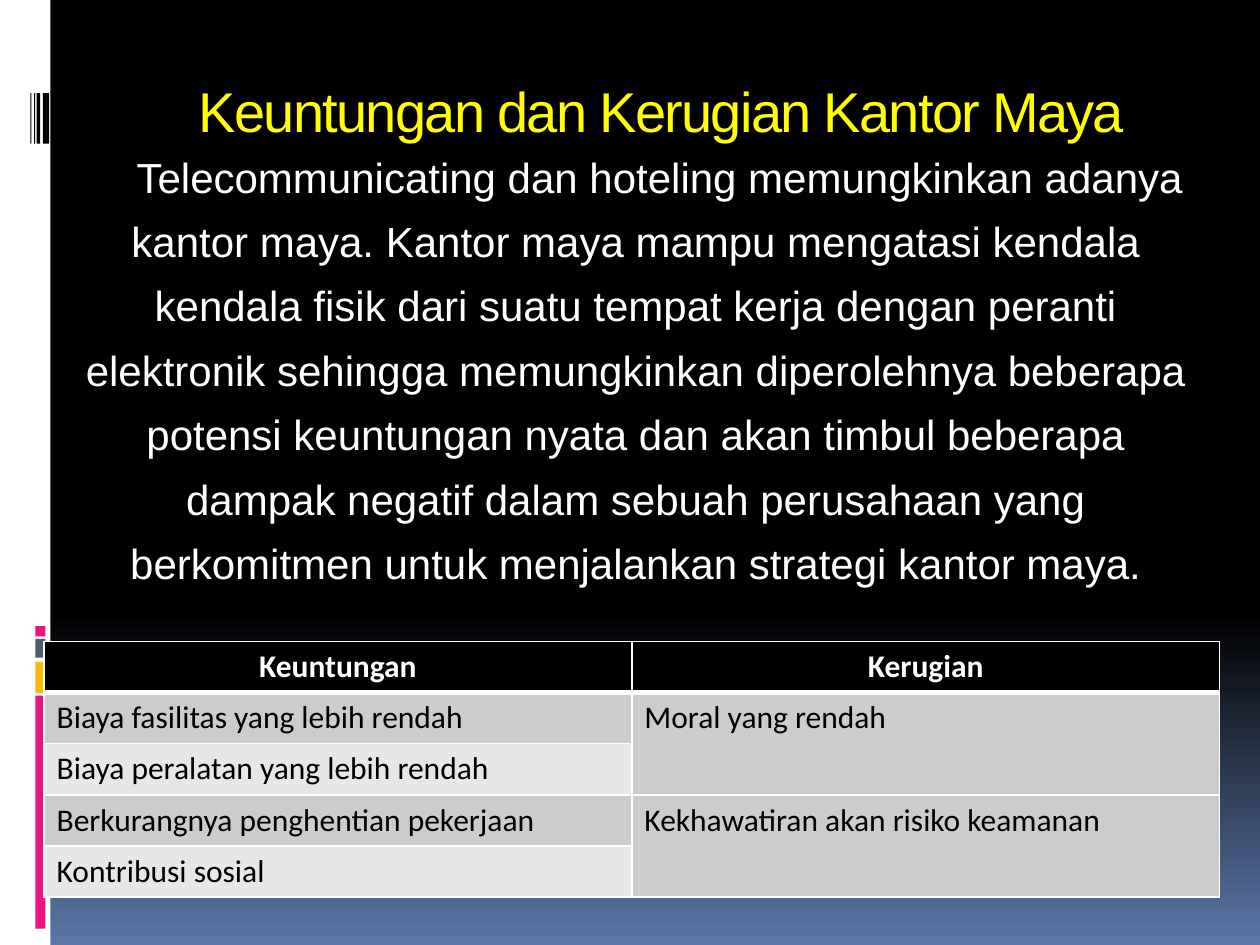
import pptx
import pptx.dml.color
import pptx.enum.shapes
import pptx.enum.text
import pptx.oxml
import pptx.oxml.ns
import pptx.util
from pptx.util import Inches

RGBColor = pptx.dml.color.RGBColor
ALIGN = pptx.enum.text.PP_ALIGN
BLACK = RGBColor(0x00, 0x00, 0x00)
WHITE = RGBColor(0xFF, 0xFF, 0xFF)
YELLOW = RGBColor(0xFF, 0xFF, 0x00)
BLUE = RGBColor(0x5B, 0x77, 0xA8)
PINK = RGBColor(0xEA, 0x15, 0x7A)
AMBER = RGBColor(0xFE, 0xB8, 0x0A)
SLATE = RGBColor(0x4E, 0x5B, 0x6F)
GREY = RGBColor(0xCC, 0xCC, 0xCC)
LIGHT_GREY = RGBColor(0xE7, 0xE7, 0xE7)

NS = pptx.oxml.ns.nsdecls("a")

# left, top, width, height, colour
SIDE_BARS = [
    (0, 0, 0.4, 7.5, WHITE),
    (0.28, 5.52, 0.08, 1.85, PINK),
    (0.28, 5.25, 0.08, 0.25, AMBER),
    (0.28, 5.07, 0.08, 0.15, SLATE),
    (0.28, 4.97, 0.08, 0.08, PINK),
] + [(left, 0.74, width, 0.4, BLACK)
     for left, width in ((0.34, 0.05), (0.29, 0.03), (0.27, 0.01), (0.24, 0.01))]

BODY_LINES = [
    "Telecommunicating dan hoteling memungkinkan adanya",
    "kantor maya. Kantor maya mampu mengatasi kendala",
    "kendala fisik dari suatu tempat kerja dengan peranti",
    "elektronik sehingga memungkinkan diperolehnya beberapa",
    "potensi keuntungan nyata dan akan timbul beberapa",
    "dampak negatif dalam sebuah perusahaan yang",
    "berkomitmen untuk menjalankan strategi kantor maya.",
]

TABLE_ROWS = [
    ("Keuntungan", "Kerugian"),
    ("Biaya fasilitas yang lebih rendah", "Moral yang rendah"),
    ("Biaya peralatan yang lebih rendah", ""),
    ("Berkurangnya penghentian pekerjaan", "Kekhawatiran akan risiko keamanan"),
    ("Kontribusi sosial", ""),
]


def add_text(paragraph, text, *, size, color, font="Arial", bold=False,
             align=ALIGN.LEFT, spacing=None):
    run = paragraph.add_run()
    run.text = text
    run.font.name = font
    run.font.size = pptx.util.Pt(size)
    run.font.bold = bold
    run.font.color.rgb = color
    paragraph.alignment = align
    if spacing is not None:
        run.font._element.set("spc", str(spacing * 100))


def set_background(slide):
    fill = slide.background.fill
    fill.gradient()
    fill.gradient_angle = 270  # counter-clockwise: runs from top to bottom
    stops = fill._fill._gradFill.find(pptx.oxml.ns.qn("a:gsLst"))
    for stop in list(stops):
        stops.remove(stop)
    for percent, color in ((0, BLACK), (65, BLACK), (100, BLUE)):
        stops.append(pptx.oxml.parse_xml(
            f'<a:gs {NS} pos="{percent * 1000}"><a:srgbClr val="{color}"/></a:gs>'))


def add_bar(slide, left, top, width, height, color):
    bar = slide.shapes.add_shape(
        pptx.enum.shapes.MSO_SHAPE.RECTANGLE,
        Inches(left), Inches(top), Inches(width), Inches(height))
    bar.shadow.inherit = False
    bar.fill.solid()
    bar.fill.fore_color.rgb = color
    bar.line.fill.background()


def place(holder, left, top, width, height):
    holder.left, holder.top = Inches(left), Inches(top)
    holder.width, holder.height = Inches(width), Inches(height)
    frame = holder.text_frame
    frame.word_wrap = True
    frame.auto_size = pptx.enum.text.MSO_AUTO_SIZE.NONE
    frame.vertical_anchor = pptx.enum.text.MSO_ANCHOR.TOP
    return frame


def fill_title(slide):
    frame = place(slide.shapes.title, 1, 0.56, 8.5, 1)
    add_text(frame.paragraphs[0], "Keuntungan dan Kerugian Kantor Maya",
             size=32, color=YELLOW, align=ALIGN.CENTER, spacing=-1)


def fill_body(slide):
    frame = place(slide.placeholders[1], 0.51, 1.15, 9, 5.54)
    for index, line in enumerate(BODY_LINES):
        paragraph = frame.add_paragraph() if index else frame.paragraphs[0]
        paragraph.space_before = pptx.util.Pt(8)
        properties = paragraph._p.get_or_add_pPr()
        properties.set("marL", str(Inches(0.45)))
        properties.set("indent", str(Inches(-0.38)))
        properties.append(pptx.oxml.parse_xml(f"<a:buNone {NS}/>"))
        if index == 0:
            add_text(paragraph, "\t", size=20, color=WHITE)
        add_text(paragraph, line, size=24, color=WHITE, align=ALIGN.CENTER)


def set_borders(cell, bottom, top):
    properties = cell._tc.get_or_add_tcPr()
    sides = (("lnL", 1), ("lnR", 1), ("lnT", top), ("lnB", bottom))
    for position, (side, points) in enumerate(sides):
        properties.insert(position, pptx.oxml.parse_xml(
            f'<a:{side} {NS} w="{pptx.util.Pt(points)}"><a:solidFill>'
            f'<a:srgbClr val="{WHITE}"/></a:solidFill></a:{side}>'))


def add_comparison(slide):
    row_count = len(TABLE_ROWS)
    table = slide.shapes.add_table(
        row_count, 2, Inches(0.35), Inches(5.09), Inches(9.33), Inches(2.03)).table
    for row in (1, 3):
        table.cell(row, 1).merge(table.cell(row + 1, 1))
    for row, texts in enumerate(TABLE_ROWS):
        header = row == 0
        for column, text in enumerate(texts):
            cell = table.cell(row, column)
            cell.fill.solid()
            cell.fill.fore_color.rgb = (
                BLACK if header else GREY if row % 2 else LIGHT_GREY)
            set_borders(cell, bottom=3 if header else 1, top=3 if row == 1 else 1)
            if text:
                add_text(cell.text_frame.paragraphs[0], text, size=18,
                         font="Calibri", bold=header,
                         color=WHITE if header else BLACK,
                         align=ALIGN.CENTER if header else ALIGN.LEFT)


def main():
    deck = pptx.Presentation()
    deck.slide_width, deck.slide_height = Inches(10), Inches(7.5)
    slide = deck.slides.add_slide(deck.slide_layouts[1])
    set_background(slide)
    # Decoration along the left edge
    for bar in SIDE_BARS:
        add_bar(slide, *bar)
    # Content
    fill_title(slide)
    fill_body(slide)
    add_comparison(slide)
    deck.save("out.pptx")


if __name__ == "__main__":
    main()
